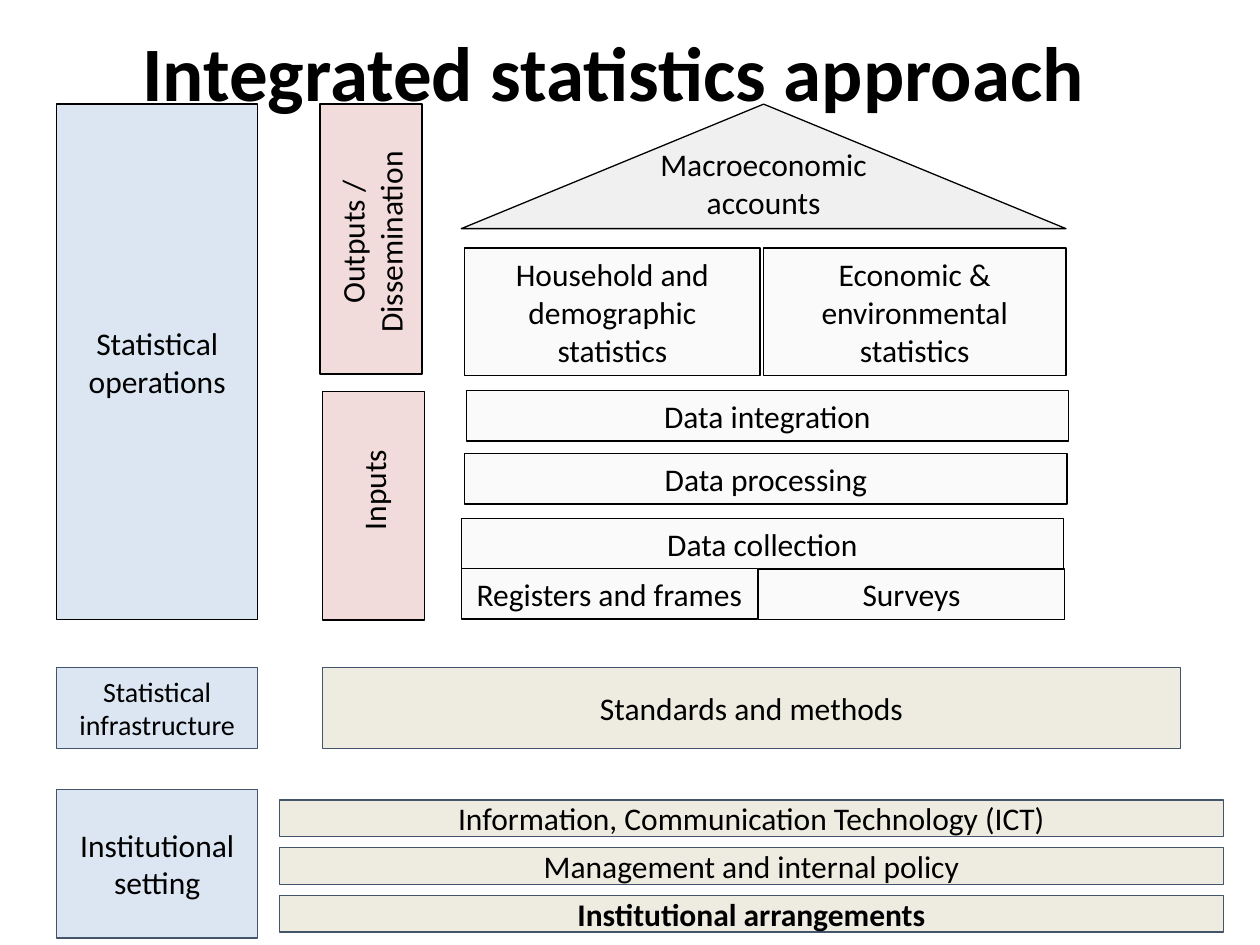
from pptx import Presentation
from pptx.dml.color import RGBColor
from pptx.enum.shapes import MSO_SHAPE as Shape
from pptx.enum.text import MSO_ANCHOR as Anchor, PP_ALIGN as Align
from pptx.util import Cm, Pt

BLACK = RGBColor(0x00, 0x00, 0x00)
SLATE = RGBColor(0x44, 0x54, 0x6A)
BLUE = RGBColor(0xDC, 0xE6, 0xF2)
PINK = RGBColor(0xF2, 0xDC, 0xDB)
BEIGE = RGBColor(0xEE, 0xEC, 0xE1)
OFF_WHITE = RGBColor(0xFA, 0xFA, 0xFA)
LIGHT_GREY = RGBColor(0xF0, 0xF0, 0xF0)

# Content; places are left, top, width, height in centimetres
TITLE = "Integrated statistics approach"
LEVELS = [  # text, top, height, line colour, text size
    ("Statistical infrastructure", 13.46, 1.63, SLATE, 16),
    ("Institutional setting", 15.91, 3.0, SLATE, 18),
    ("Statistical operations", 2.1, 10.39, BLACK, 18),
]
STAGES = [  # text, place, extra inset below the text
    ("Outputs / Dissemination", (6.45, 2.1, 2.06, 5.44), 0),
    ("Inputs", (6.5, 7.9, 2.06, 4.6), 0.76),
]
STATISTICS = [
    ("Household and demographic statistics", (9.37, 5.0, 5.95, 2.57)),
    ("Economic & environmental\vstatistics", (15.39, 5.0, 6.1, 2.57)),
]
DATA_STEPS = [  # text, left, top, width
    ("Data integration", 9.4, 7.87, 12.14),
    ("Data processing", 9.37, 9.14, 12.14),
    ("Data collection", 9.3, 10.46, 12.14),
    ("Registers and frames", 9.3, 11.46, 5.97),
    ("Surveys", 15.29, 11.47, 6.17),
]
STEP_HEIGHT = 1.02
ROOF = ("Macroeconomic\naccounts", (9.3, 2.1, 12.19, 2.51))
STANDARDS = ("Standards and methods", (6.5, 13.46, 17.3, 1.63))
SETTINGS = [  # text, bold
    ("Information, Communication Technology (ICT)", False),
    ("Management and internal policy", False),
    ("Institutional arrangements", True),
]
SETTING_TOP, SETTING_PITCH = 16.13, 0.96


def format_text(text_frame, size, bold=False):
    text_frame.word_wrap = True
    text_frame.vertical_anchor = Anchor.MIDDLE
    for paragraph in text_frame.paragraphs:
        paragraph.alignment = Align.CENTER
        for run in paragraph.runs:
            run.font.name = "Calibri"
            run.font.size = Pt(size)
            run.font.bold = bold
            run.font.color.rgb = BLACK


def add_block(slide, text, place, fill, line=BLACK, size=18, bold=False,
              kind=Shape.RECTANGLE, extra_below=0):
    shape = slide.shapes.add_shape(kind, *map(Cm, place))
    shape.shadow.inherit = False
    shape.fill.solid()
    shape.fill.fore_color.rgb = fill
    shape.line.color.rgb = line
    shape.line.width = Pt(0.75)
    shape.text_frame.text = text
    shape.text_frame.margin_bottom = Cm(0.13 + extra_below)
    format_text(shape.text_frame, size, bold)
    return shape


def main():
    presentation = Presentation()
    presentation.slide_width, presentation.slide_height = Cm(25.4), Cm(19.05)
    slide = presentation.slides.add_slide(presentation.slide_layouts[5])

    # Title
    title = slide.shapes.title
    title.left, title.top, title.width, title.height = map(
        Cm, (0.94, -0.15, 22.86, 3.17))
    title.text_frame.text = TITLE
    format_text(title.text_frame, 44, bold=True)

    # Levels down the left side
    for text, top, height, line, size in LEVELS:
        add_block(slide, text, (1.14, top, 4.06, height), BLUE, line, size)

    # Stages with text turned upwards
    for text, place, extra in STAGES:
        stage = add_block(slide, text, place, PINK, extra_below=extra)
        stage.text_frame._txBody.bodyPr.set("vert", "vert270")

    # House of statistics
    add_block(slide, *ROOF, LIGHT_GREY, kind=Shape.ISOSCELES_TRIANGLE,
              extra_below=0.58)
    for text, place in STATISTICS:
        add_block(slide, text, place, OFF_WHITE)
    for text, left, top, width in DATA_STEPS:
        add_block(slide, text, (left, top, width, STEP_HEIGHT), OFF_WHITE)

    # Infrastructure and institutional setting
    add_block(slide, *STANDARDS, BEIGE, SLATE)
    for row, (text, bold) in enumerate(SETTINGS):
        place = (5.64, SETTING_TOP + row * SETTING_PITCH, 19.02, 0.74)
        add_block(slide, text, place, BEIGE, SLATE, bold=bold)

    presentation.save("out.pptx")


if __name__ == "__main__":
    main()
